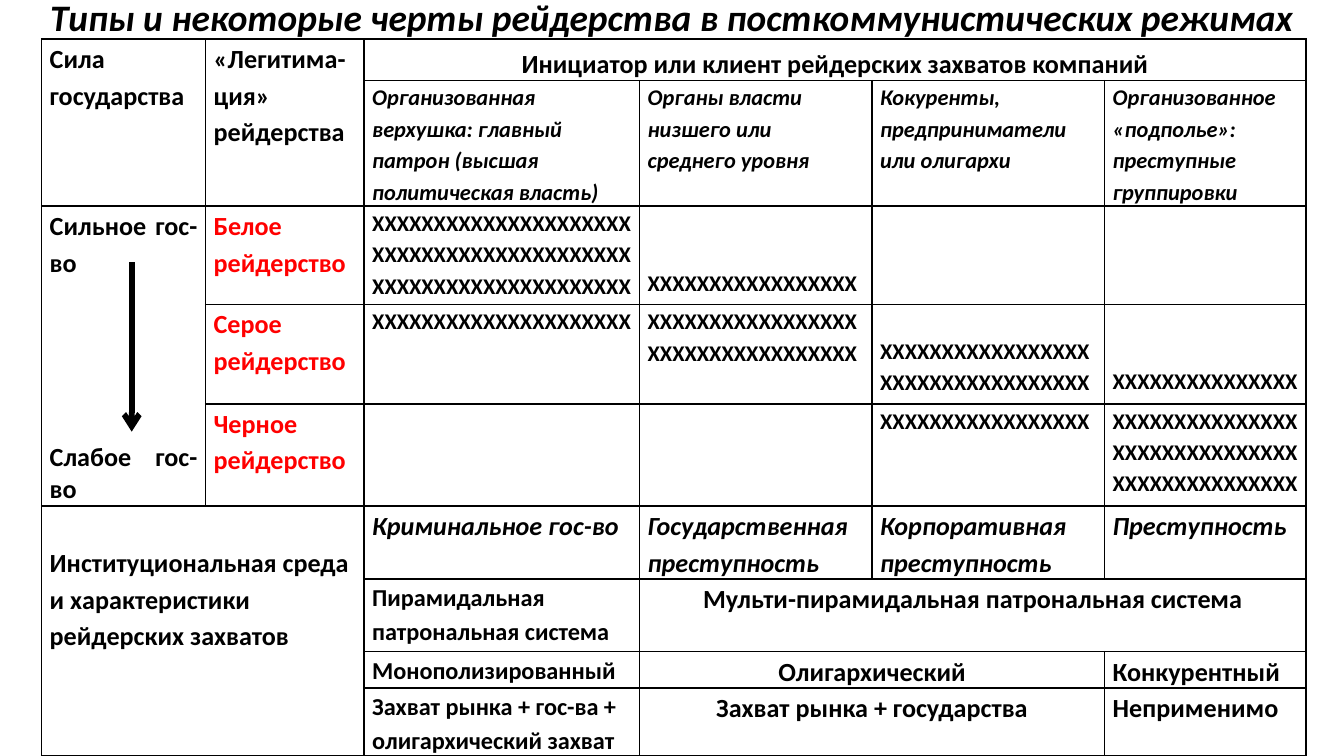
from dataclasses import dataclass

import pptx
import pptx.dml.color
import pptx.enum.dml
import pptx.enum.shapes
import pptx.enum.text
import pptx.oxml
import pptx.oxml.ns
import pptx.util

Inches, Pt = pptx.util.Inches, pptx.util.Pt
ALIGN = pptx.enum.text.PP_ALIGN
LEFT, CENTER, JUSTIFY = ALIGN.LEFT, ALIGN.CENTER, ALIGN.JUSTIFY


@dataclass(frozen=True)
class Theme:
    font: str = "Calibri"
    ink: str = "000000"
    accent: str = "FF0000"
    title: float = 20
    body: float = 14
    detail: float = 13
    small: float = 12
    line_spacing: float = 1.15
    border: float = 1
    arrow: float = 3


@dataclass(frozen=True)
class Style:
    size: float
    color: str
    italic: bool = False
    align: ALIGN = JUSTIFY


@dataclass(frozen=True)
class Entry:
    """One table cell; lead is the space in points above its text."""
    row: int
    column: int
    lines: tuple[str, ...]
    style: Style
    rows: int = 1
    columns: int = 1
    lead: float = 0


THEME = Theme()
WIDTH = 10
HEIGHT = WIDTH * 9 / 16
TABLE_LEFT, TABLE_TOP = 0.31, 0.29
COLUMN_WIDTHS = (1.22, 1.18, 2.05, 1.73, 1.73, 1.5)
ROW_HEIGHTS = (0.31, 0.93, 0.73, 0.74, 0.76, 0.54, 0.54, 0.27, 0.45)
MARKS_LINE = 16  # height of one skipped line of marks, in points

HEADING = Style(THEME.body, THEME.ink, align=LEFT)
PLAIN = Style(THEME.body, THEME.ink)
CENTERED = Style(THEME.body, THEME.ink, align=CENTER)
ACTOR = Style(THEME.small, THEME.ink, italic=True, align=LEFT)
RAID = Style(THEME.body, THEME.accent)
MARKS = Style(THEME.small, THEME.ink)
REGIME = Style(THEME.body, THEME.ink, italic=True)
DETAIL = Style(THEME.detail, THEME.ink)
DETAIL_LEFT = Style(THEME.detail, THEME.ink, align=LEFT)

ACTORS = (
    "Oрганизованная верхушка: главный патрон (высшая политическая власть)",
    "Органы власти низшего или среднего уровня",
    "Кокуренты, предприниматели или oлигархи",
    "Организованное «подполье»: преступные группировки",
)
RAIDS = ("Белое рейдерство", "Серое рейдерство", "Черное рейдерство")
REGIMES = ("Криминальное гос-во", "Государственная преступность",
           "Корпоративная преступность", "Преступность")


def marks(row: int, column: int, length: int, count: int = 1, skipped: int = 0) -> Entry:
    """Lines of X marks that start after some skipped lines."""
    return Entry(row, column, ("X" * length,) * count, MARKS, lead=skipped * MARKS_LINE)


ENTRIES = [
    Entry(0, 0, ("Сила государства",), HEADING, rows=2),
    Entry(0, 1, ("«Легитима-ция» рейдерства",), PLAIN, rows=2),
    Entry(0, 2, ("Инициатор или клиент рейдерских захватов компаний",), CENTERED,
          columns=4, lead=2.5),
    *(Entry(1, 2 + i, (text,), ACTOR) for i, text in enumerate(ACTORS)),
    Entry(2, 0, ("Сильное гос-во", "Слабое гос-во"), PLAIN, rows=3),
    *(Entry(2 + i, 1, (text,), RAID) for i, text in enumerate(RAIDS)),
    marks(2, 2, 63),
    marks(2, 3, 17, skipped=2),
    marks(3, 2, 21),
    marks(3, 3, 17, count=2),
    marks(3, 4, 17, count=2, skipped=1),
    marks(3, 5, 15, skipped=2),
    marks(4, 4, 17),
    marks(4, 5, 15, count=3),
    Entry(5, 0, ("Институциональная среда и характеристики рейдерских захватов",),
          HEADING, rows=4, columns=2, lead=20),
    *(Entry(5, 2 + i, (text,), REGIME) for i, text in enumerate(REGIMES)),
    Entry(6, 2, ("Пирамидальная патрональная система",), DETAIL),
    Entry(6, 3, ("Мульти-пирамидальная патрональная система",), CENTERED, columns=3),
    Entry(7, 2, ("Moнoпoлизированный",), DETAIL),
    Entry(7, 3, ("Oлигархический",), CENTERED, columns=2),
    Entry(7, 5, ("Конкурентный",), PLAIN),
    Entry(8, 2, ("Захват рынка + гос-ва + oлигархический захват",), DETAIL_LEFT),
    Entry(8, 3, ("Захват рынка + государства",), CENTERED, columns=2),
    Entry(8, 5, ("Неприменимо",), PLAIN),
]


def rgb(color: str) -> pptx.dml.color.RGBColor:
    return pptx.dml.color.RGBColor.from_string(color)


def format_paragraph(para, style: Style) -> None:
    para.alignment = style.align
    font = para.font
    font.name, font.size = THEME.font, Pt(style.size)
    font.bold, font.italic = True, style.italic
    font.color.rgb = rgb(style.color)


def format_cell(cell) -> None:
    cell.margin_left = cell.margin_right = Inches(0.06)
    cell.margin_top = cell.margin_bottom = 0
    properties = cell._tc.get_or_add_tcPr()
    for side in "LRTB":
        properties.append(pptx.oxml.parse_xml(
            f'<a:ln{side} {pptx.oxml.ns.nsdecls("a")} w="{Pt(THEME.border)}">'
            f'<a:solidFill><a:srgbClr val="{THEME.ink}"/></a:solidFill></a:ln{side}>'))
    cell.fill.background()


def fill_entry(table, entry: Entry) -> None:
    cell = table.cell(entry.row, entry.column)
    if entry.rows > 1 or entry.columns > 1:
        cell.merge(table.cell(entry.row + entry.rows - 1,
                              entry.column + entry.columns - 1))
    cell.margin_top = Pt(entry.lead)
    cell.text_frame.text = "\n".join(entry.lines)
    for para in cell.text_frame.paragraphs:
        format_paragraph(para, entry.style)
        para.line_spacing = THEME.line_spacing


def add_title(page) -> None:
    title = page.shapes.title
    title.left, title.top = 0, Inches(-0.1)
    title.width, title.height = Inches(WIDTH), Inches(0.44)
    frame = title.text_frame
    frame.text = "Tипы и некоторые черты рейдерства в посткоммунистических режимах"
    frame.auto_size = pptx.enum.text.MSO_AUTO_SIZE.NONE
    frame.vertical_anchor = pptx.enum.text.MSO_ANCHOR.MIDDLE
    format_paragraph(frame.paragraphs[0],
                     Style(THEME.title, THEME.ink, italic=True, align=CENTER))


def add_raiding_table(page) -> None:
    table = page.shapes.add_table(
        len(ROW_HEIGHTS), len(COLUMN_WIDTHS), Inches(TABLE_LEFT), Inches(TABLE_TOP),
        Inches(sum(COLUMN_WIDTHS)), Inches(sum(ROW_HEIGHTS))).table
    table.first_row = table.horz_banding = False
    for column, width in zip(table.columns, COLUMN_WIDTHS):
        column.width = Inches(width)
    for row, height in zip(table.rows, ROW_HEIGHTS):
        row.height = Inches(height)
    for cell in table.iter_cells():
        format_cell(cell)
    for entry in ENTRIES:
        fill_entry(table, entry)
    weak_state = table.cell(2, 0).text_frame.paragraphs[1]
    weak_state.line_spacing = 1.0
    weak_state.space_before = Pt(86.8)


def add_state_arrow(page) -> None:
    x = Inches(0.098 * WIDTH)
    arrow = page.shapes.add_connector(
        pptx.enum.shapes.MSO_CONNECTOR.STRAIGHT,
        x, Inches(0.347 * HEIGHT), x, Inches(0.571 * HEIGHT))
    arrow.line.color.rgb = rgb(THEME.ink)
    arrow.line.width = Pt(THEME.arrow)
    namespace = pptx.oxml.ns.nsdecls("a")
    arrow.line._get_or_add_ln().append(
        pptx.oxml.parse_xml(f'<a:tailEnd {namespace} type="arrow"/>'))
    arrow._element.spPr.append(pptx.oxml.parse_xml(f"<a:effectLst {namespace}/>"))


def main() -> None:
    deck = pptx.Presentation()
    deck.slide_width, deck.slide_height = Inches(WIDTH), Inches(HEIGHT)
    page = deck.slides.add_slide(deck.slide_layouts.get_by_name("Title Only"))
    add_title(page)
    add_raiding_table(page)
    add_state_arrow(page)
    deck.save("out.pptx")


if __name__ == "__main__":
    main()
